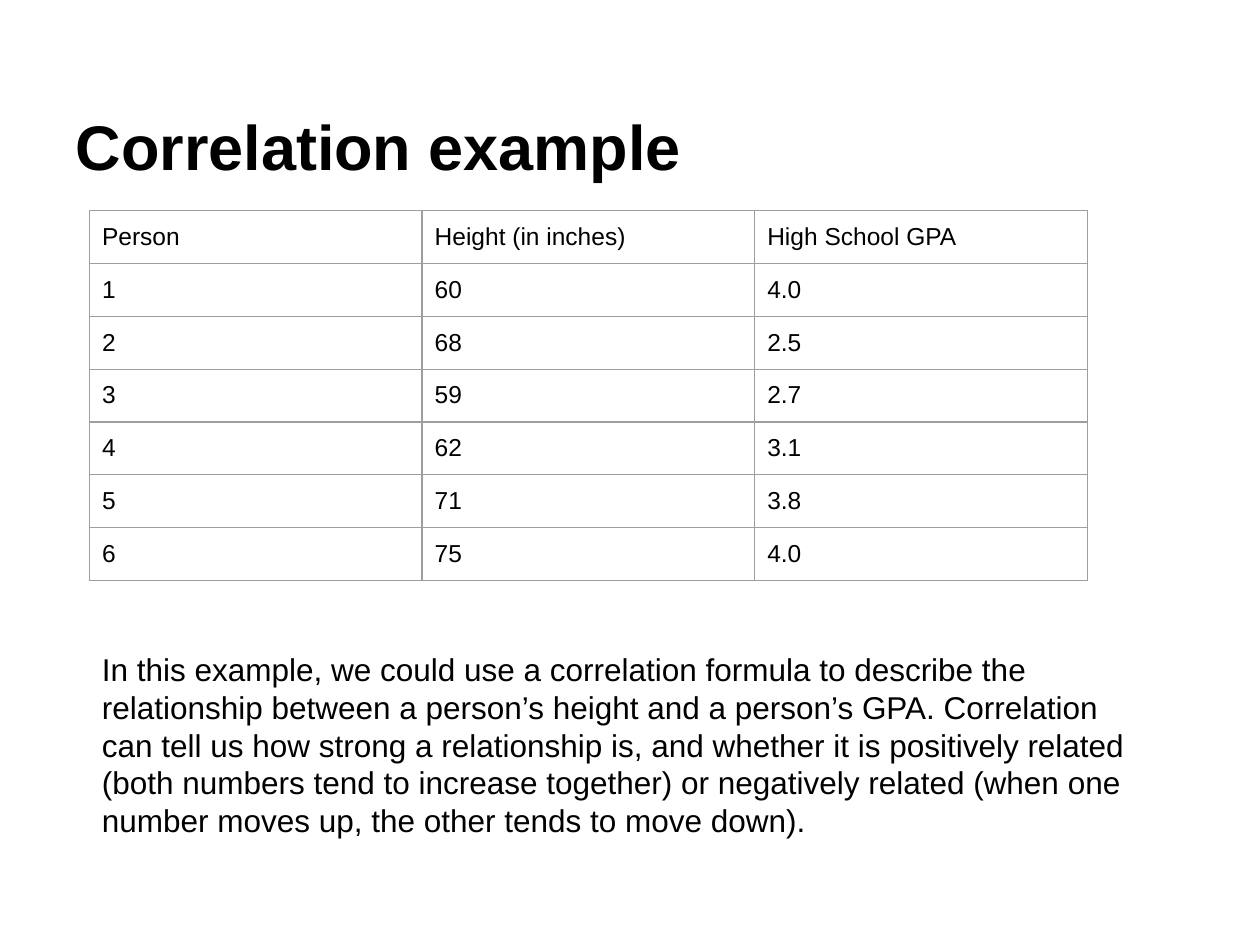
from pptx import Presentation, util as u
from pptx.dml.color import RGBColor
from pptx.enum import text
from pptx.oxml import parse_xml
from pptx.oxml.ns import nsdecls

INK = {"text": "000000", "grid": "9E9E9E"}

ROWS = [
    ("Person", "Height (in inches)", "High School GPA"),
    ("1", "60", "4.0"),
    ("2", "68", "2.5"),
    ("3", "59", "2.7"),
    ("4", "62", "3.1"),
    ("5", "71", "3.8"),
    ("6", "75", "4.0"),
]

NOTE = (
    "In this example, we could use a correlation formula to describe the "
    "relationship between a person’s height and a person’s GPA. Correlation "
    "can tell us how strong a relationship is, and whether it is positively "
    "related (both numbers tend to increase together) or negatively related "
    "(when one number moves up, the other tends to move down)."
)


class Page:
    font = "Arial"
    pad = u.Inches(0.1)

    def __init__(self, slide):
        self.slide = slide

    def inset(self, item):
        item.margin_left = item.margin_right = self.pad
        item.margin_top = item.margin_bottom = self.pad

    def label(self, frame, words, size, bold=False):
        frame.text = words
        for para in frame.paragraphs:
            para.alignment = text.PP_ALIGN.LEFT
            para.font.name = self.font
            para.font.size = u.Pt(size)
            para.font.bold = bold
            para.font.color.rgb = RGBColor.from_string(INK["text"])

    def fit(self, frame, anchor):
        self.inset(frame)
        frame.word_wrap = True
        frame.auto_size = text.MSO_AUTO_SIZE.NONE
        frame.vertical_anchor = anchor

    def title(self, words, box):
        shape = self.slide.shapes.title
        shape.left, shape.top, shape.width, shape.height = map(u.Inches, box)
        self.fit(shape.text_frame, text.MSO_ANCHOR.BOTTOM)
        self.label(shape.text_frame, words, 36, bold=True)

    def note(self, words, box):
        frame = self.slide.shapes.add_textbox(*map(u.Inches, box)).text_frame
        self.fit(frame, text.MSO_ANCHOR.TOP)
        self.label(frame, words, 18)

    def border(self, cell):
        props = cell._tc.get_or_add_tcPr()
        for at, side in enumerate(("lnL", "lnR", "lnT", "lnB")):
            props.insert(at, parse_xml(
                f'<a:{side} {nsdecls("a")} w="{u.Pt(0.75)}"><a:solidFill>'
                f'<a:srgbClr val="{INK["grid"]}"/></a:solidFill></a:{side}>'))

    def table(self, rows, left, top, wide, high):
        count, cols = len(rows), len(rows[0])
        grid = self.slide.shapes.add_table(
            count, cols, u.Inches(left), u.Inches(top),
            u.Inches(wide * cols), u.Inches(high * count)).table
        grid.first_row = grid.horz_banding = False
        for r, row in enumerate(rows):
            for c, words in enumerate(row):
                cell = grid.cell(r, c)
                self.inset(cell)
                cell.fill.background()
                self.label(cell.text_frame, words, 14)
                self.border(cell)


def main():
    deck = Presentation()
    deck.slide_width, deck.slide_height = u.Inches(10), u.Inches(7.5)
    page = Page(deck.slides.add_slide(deck.slide_layouts[5]))

    # Heading
    page.title("Correlation example", (0.5, 0.3, 9, 1.25))

    # Heights and grades
    page.table(ROWS, 0.71, 1.67, 2.64, 0.42)

    # Explanation
    page.note(NOTE, (0.71, 5.06, 8.51, 1.76))

    deck.save("out.pptx")


if __name__ == "__main__":
    main()
